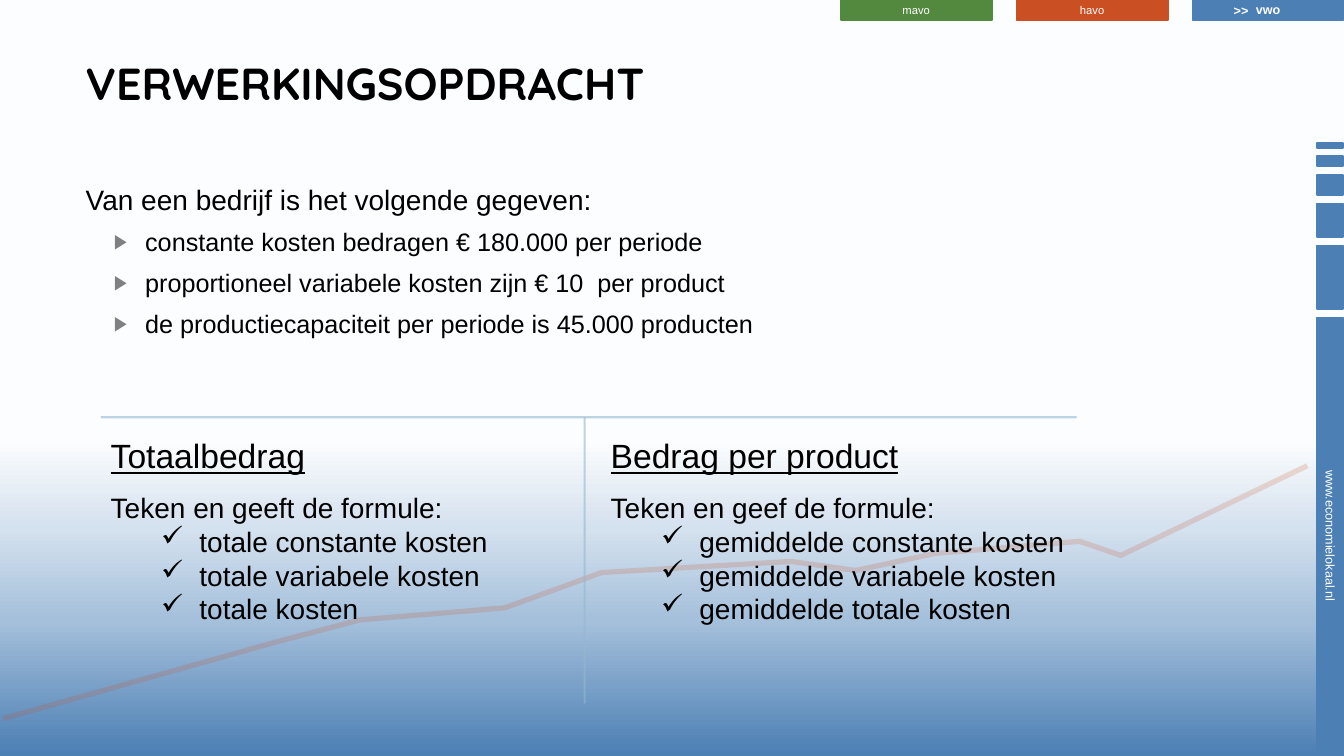
from dataclasses import dataclass
from typing import Optional

import lxml.etree
import pptx
import pptx.dml.color
import pptx.enum.shapes
import pptx.enum.text
import pptx.oxml.ns
import pptx.shapes.autoshape
import pptx.shapes.base
import pptx.slide
import pptx.text.text
import pptx.util

RGBColor = pptx.dml.color.RGBColor
Align = pptx.enum.text.PP_ALIGN
Anchor = pptx.enum.text.MSO_ANCHOR
AutoSize = pptx.enum.text.MSO_AUTO_SIZE
qn = pptx.oxml.ns.qn

BLUE = RGBColor(0x4C, 0x7F, 0xB4)
ORANGE = RGBColor(0xCA, 0x4F, 0x22)
GREEN = RGBColor(0x52, 0x89, 0x3F)
PALE_BLUE = RGBColor(0x95, 0xB8, 0xCF)
GREY = RGBColor(0x80, 0x80, 0x80)
BLACK = RGBColor(0, 0, 0)
WHITE = RGBColor(0xFF, 0xFF, 0xFF)
SKY = [(0, BLUE), (18, RGBColor(0xA5, 0xC0, 0xDB)), (30, RGBColor(0xD4, 0xE1, 0xEE)),
       (42, RGBColor(0xFC, 0xFD, 0xFE)), (50, WHITE)]

COLUMNS, ROWS = 133.33, 75
CELL = pptx.util.Inches(0.1)


def cells(count: float) -> pptx.util.Emu:
    return pptx.util.Emu(round(count * CELL))


@dataclass(frozen=True)
class Area:
    column: float
    row: float
    width: float
    height: float

    def emus(self) -> list[pptx.util.Emu]:
        return [cells(n) for n in (self.column, self.row, self.width, self.height)]


@dataclass(frozen=True)
class Style:
    size: float
    color: RGBColor = BLACK
    bold: bool = False
    underline: bool = False
    font: str = "Arial"


@dataclass(frozen=True)
class Bullet:
    char: str
    margin: float
    hanging: float
    color: Optional[RGBColor] = None
    percent: int = 100


@dataclass(frozen=True)
class Tab:
    label: str
    color: RGBColor
    style: Style


@dataclass(frozen=True)
class Task:
    heading: str
    intro: str
    formulas: tuple[str, ...]
    column: float


ARROW = Bullet("▶", 5.9, 3.1, GREY, 80)
CHECK = Bullet("✓", 8.8, 3.8)
LABEL = Style(8, WHITE)
ACTIVE = Style(9, WHITE, bold=True)
ADDRESS = Style(9, WHITE)

TABS = [Tab("mavo", GREEN, LABEL), Tab("havo", ORANGE, LABEL), Tab("vwo", BLUE, ACTIVE)]
TAB_START, TAB_STEP, TAB_WIDTH, TAB_HEIGHT = 83.4, 17.45, 15, 2

SIDE_BARS = [(0.5, ""), (1, ""), (2, ""), (3.3, ""), (6.3, ""), (43.3, "www.economielokaal.nl")]
BAR_START, BAR_GAP, BAR_WIDTH, BAR_CENTER = 14.15, 0.85, 2.6, 131.95

TREND = [(0.3, 71.3), (27, 63.8), (35.7, 61.5), (50.1, 60.3), (59.7, 56.8), (78.5, 55.7),
         (84.9, 56.6), (92.8, 54.9), (107.1, 53.7), (111.2, 55.1), (129.7, 46.2)]

GIVENS = ["constante kosten bedragen € 180.000 per periode",
          "proportioneel variabele kosten zijn € 10  per product",
          "de productiecapaciteit per periode is 45.000 producten"]

TASKS = [
    Task("Totaalbedrag", "Teken en geeft de formule:",
         ("totale constante kosten", "totale variabele kosten", "totale kosten"), 10),
    Task("Bedrag per product", "Teken en geef de formule:",
         ("gemiddelde constante kosten", "gemiddelde variabele kosten",
          "gemiddelde totale kosten"), 59.6),
]
RULE_ROW = 41.4
DIVIDERS = [((58, RULE_ROW), (58, 69.8)), ((10, RULE_ROW), (106.8, RULE_ROW))]


def write(frame: pptx.text.text.TextFrame, text: str, style: Style,
          bullet: Optional[Bullet] = None, align: Align = Align.LEFT) -> pptx.text.text._Paragraph:
    first = frame.paragraphs[0]
    paragraph = frame.add_paragraph() if first.runs else first
    paragraph.alignment = align
    properties = paragraph._p.get_or_add_pPr()
    if bullet:
        paragraph.level = 1
        properties.set("marL", str(cells(bullet.margin)))
        properties.set("indent", str(-cells(bullet.hanging)))
        if bullet.color is not None:
            color = lxml.etree.SubElement(properties, qn("a:buClr"))
            lxml.etree.SubElement(color, qn("a:srgbClr"), val=str(bullet.color))
        lxml.etree.SubElement(properties, qn("a:buSzPct"), val=str(bullet.percent * 1000))
        lxml.etree.SubElement(properties, qn("a:buChar"), char=bullet.char)
    else:
        properties.set("marL", "0")
        properties.set("indent", "0")
        lxml.etree.SubElement(properties, qn("a:buNone"))
    run = paragraph.add_run()
    run.text = text
    run.font.name = style.font
    run.font.size = pptx.util.Pt(style.size)
    run.font.bold = style.bold
    run.font.underline = style.underline
    run.font.color.rgb = style.color
    return paragraph


def set_line(shape: pptx.shapes.base.BaseShape, color: RGBColor, width: float,
             opacity: int) -> None:
    shape.line.color.rgb = color
    shape.line.width = pptx.util.Pt(width)
    stroke = shape.element.find(f".//{qn('a:ln')}//{qn('a:srgbClr')}")
    lxml.etree.SubElement(stroke, qn("a:alpha"), val=str(opacity * 1000))


def paint_sky(slide: pptx.slide.Slide) -> None:
    fill = slide.background.fill
    fill.gradient()
    fill.gradient_angle = 90
    stops = slide.element.find(f".//{qn('a:gsLst')}")
    for stop in list(stops):
        stops.remove(stop)
    for position, color in SKY:
        stop = lxml.etree.SubElement(stops, qn("a:gs"), pos=str(position * 1000))
        lxml.etree.SubElement(stop, qn("a:srgbClr"), val=str(color))


def add_block(slide: pptx.slide.Slide, area: Area, color: RGBColor, label: str,
              style: Style) -> pptx.shapes.autoshape.Shape:
    block = slide.shapes.add_shape(pptx.enum.shapes.MSO_SHAPE.RECTANGLE, *area.emus())
    block.shadow.inherit = False
    block.fill.solid()
    block.fill.fore_color.rgb = color
    block.line.color.rgb = color
    block.line.width = pptx.util.Pt(1.25)
    if label:
        frame = block.text_frame
        frame.margin_top, frame.margin_bottom = 0, cells(0.1)
        frame.vertical_anchor = Anchor.MIDDLE
        write(frame, label, style, align=Align.CENTER)
    return block


def add_text(slide: pptx.slide.Slide, area: Area, wrap: bool = True) -> pptx.text.text.TextFrame:
    frame = slide.shapes.add_textbox(*area.emus()).text_frame
    frame.word_wrap = wrap
    frame.auto_size = AutoSize.SHAPE_TO_FIT_TEXT
    return frame


def add_side_bars(slide: pptx.slide.Slide) -> None:
    top = BAR_START
    for length, label in SIDE_BARS:
        area = Area(BAR_CENTER - length / 2, top + (length - BAR_WIDTH) / 2, length, BAR_WIDTH)
        add_block(slide, area, BLUE, label, ADDRESS).rotation = 90
        top += length + BAR_GAP


def add_trend(slide: pptx.slide.Slide) -> None:
    points = [(cells(column), cells(row)) for column, row in TREND]
    builder = slide.shapes.build_freeform(*points[0])
    builder.add_line_segments(points[1:], close=False)
    trend = builder.convert_to_shape()
    trend.shadow.inherit = False
    trend.fill.background()
    set_line(trend, ORANGE, 3.75, 19)


def add_divider(slide: pptx.slide.Slide, start: tuple[float, float],
                end: tuple[float, float]) -> None:
    ends = [cells(n) for n in (*start, *end)]
    divider = slide.shapes.add_connector(pptx.enum.shapes.MSO_CONNECTOR.STRAIGHT, *ends)
    set_line(divider, PALE_BLUE, 1.5, 60)
    lxml.etree.SubElement(divider.element.spPr, qn("a:effectLst"))


def fill_placeholder(holder: pptx.shapes.base.BaseShape, area: Area) -> pptx.text.text.TextFrame:
    holder.left, holder.top, holder.width, holder.height = area.emus()
    frame = holder.text_frame
    frame.word_wrap = True
    frame.auto_size = AutoSize.NONE
    frame.vertical_anchor = Anchor.TOP
    return frame


def add_givens(slide: pptx.slide.Slide) -> None:
    body = fill_placeholder(slide.placeholders[1], Area(7.5, 17.6, 114.4, 51.4))
    intro = write(body, "Van een bedrijf is het volgende gegeven:", Style(20))
    givens = [write(body, given, Style(18), ARROW) for given in GIVENS]
    for paragraph in (intro, *givens):
        paragraph.space_before = pptx.util.Pt(0 if paragraph is intro else 4.2)
        paragraph.space_after = pptx.util.Pt(3.4)


def add_task(slide: pptx.slide.Slide, task: Task) -> None:
    write(add_text(slide, Area(task.column, 42.7, 51.1, 5)), task.heading,
          Style(24, underline=True))
    formulas = add_text(slide, Area(task.column, 48.2, 51.1, 14.5))
    write(formulas, task.intro, Style(20))
    for formula in task.formulas:
        write(formulas, formula, Style(20), CHECK)


def main() -> None:
    deck = pptx.Presentation()
    deck.slide_width, deck.slide_height = cells(COLUMNS), cells(ROWS)
    slide = deck.slides.add_slide(deck.slide_layouts[1])
    paint_sky(slide)
    add_side_bars(slide)
    for index, tab in enumerate(TABS):
        area = Area(TAB_START + index * TAB_STEP, 0, TAB_WIDTH, TAB_HEIGHT)
        add_block(slide, area, tab.color, tab.label, tab.style)
    write(add_text(slide, Area(121.4, -0.2, 3.5, 2.5), wrap=False), ">>", ACTIVE)
    add_trend(slide)
    title = fill_placeholder(slide.shapes.title, Area(7.5, 5, 100.3, 8.9))
    write(title, "VERWERKINGSOPDRACHT", Style(32, bold=True, font="Quicksand"))
    add_givens(slide)
    for start, end in DIVIDERS:
        add_divider(slide, start, end)
    for task in TASKS:
        add_task(slide, task)
    deck.save("out.pptx")


if __name__ == "__main__":
    main()
